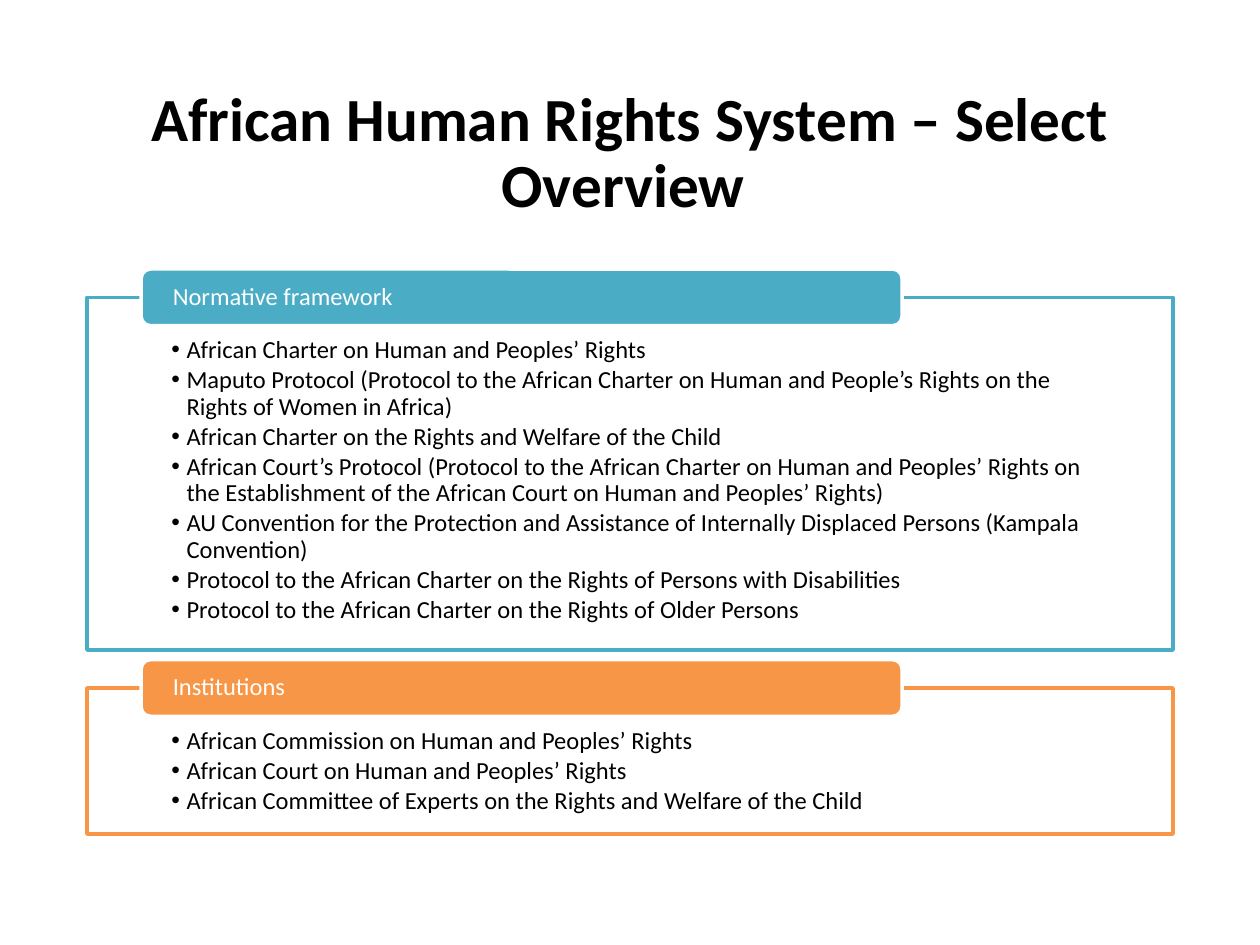
from pptx import Presentation
from pptx.dml.color import RGBColor
from pptx.enum.shapes import MSO_SHAPE as Shape
from pptx.enum.text import MSO_ANCHOR as Anchor, MSO_AUTO_SIZE as AutoSize, PP_ALIGN as Align
from pptx.util import Inches, Pt

TITLE = "African Human Rights System – Select Overview "
SECTIONS = [
    {"heading": "Normative framework", "accent": "teal", "top": 2.36, "height": 2.8,
     "items": [
         "African Charter on Human and Peoples’ Rights",
         "Maputo Protocol (Protocol to the African Charter on Human and People’s Rights "
         "on the Rights of Women in Africa)",
         "African Charter on the Rights and Welfare of the Child",
         "African Court’s Protocol (Protocol to the African Charter on Human and Peoples’ "
         "Rights on the Establishment of the African Court on Human and Peoples’ Rights)",
         "AU Convention for the Protection and Assistance of Internally Displaced Persons "
         "(Kampala Convention)",
         "Protocol to the African Charter on the Rights of Persons with Disabilities",
         "Protocol to the African Charter on the Rights of Older Persons",
     ]},
    {"heading": "Institutions", "accent": "orange", "top": 5.46, "height": 1.16,
     "items": [
         "African Commission on Human and Peoples’ Rights",
         "African Court on Human and Peoples’ Rights",
         "African Committee of Experts on the Rights and Welfare of the Child",
     ]},
]

THEME = {
    "font": "Calibri", "title_size": 35, "text_size": 14, "line_width": 2,
    "black": RGBColor.from_string("000000"), "white": RGBColor.from_string("FFFFFF"),
    "teal": RGBColor.from_string("4BACC6"), "orange": RGBColor.from_string("F79646"),
}
LEFT, WIDTH = 0.69, 8.62
TAB_LEFT, TAB_WIDTH, TAB_HEIGHT = 1.12, 6.04, 0.45
BULLET_INDENT = 0.12


def set_all(target, formats):
    for attribute, value in formats.items():
        setattr(target, attribute, value)


def place(part, left, top, width, height):
    set_all(part, {"left": Inches(left), "top": Inches(top),
                   "width": Inches(width), "height": Inches(height)})


def paint(part, fill, line):
    part.fill.solid()
    part.fill.fore_color.rgb = fill
    part.line.color.rgb = line
    part.line.width = Pt(THEME["line_width"])


def write(part, lines, color, size, anchor, align, margins, after=0, bold=False):
    """Fill a part with one paragraph per line; margins are left, top, right, bottom."""
    frame = part.text_frame
    frame.text = "\n".join(lines)
    sides = ("margin_left", "margin_top", "margin_right", "margin_bottom")
    set_all(frame, {"word_wrap": True, "auto_size": AutoSize.NONE, "vertical_anchor": anchor,
                    **{side: Inches(m) for side, m in zip(sides, margins)}})
    for paragraph in frame.paragraphs:
        set_all(paragraph, {"alignment": align, "line_spacing": 0.9,
                            "space_before": Pt(0), "space_after": Pt(after)})
        for run in paragraph.runs:
            set_all(run.font, {"name": THEME["font"], "size": Pt(size), "bold": bold})
            run.font.color.rgb = color


def add_section(slide, body, section):
    accent, top = THEME[section["accent"]], section["top"]
    place(body, LEFT, top, WIDTH, section["height"])
    paint(body, THEME["white"], accent)
    write(body, section["items"], THEME["black"], THEME["text_size"], Anchor.TOP,
          Align.LEFT, (0.67, 0.32, 0.67, 0.11), after=2)
    for paragraph in body.text_frame.paragraphs:
        properties = paragraph._p.get_or_add_pPr()
        properties.set("marL", str(Inches(BULLET_INDENT)))
        properties.set("indent", str(-Inches(BULLET_INDENT)))

    tab = slide.shapes.add_shape(
        Shape.ROUNDED_RECTANGLE, Inches(TAB_LEFT), Inches(top - TAB_HEIGHT / 2),
        Inches(TAB_WIDTH), Inches(TAB_HEIGHT))
    tab.shadow.inherit = False
    paint(tab, accent, THEME["white"])
    write(tab, [section["heading"]], THEME["white"], THEME["text_size"], Anchor.MIDDLE,
          Align.LEFT, (0.23, 0, 0.23, 0))


def main():
    deck = Presentation()
    set_all(deck, {"slide_width": Inches(10), "slide_height": Inches(7.5)})
    slide = deck.slides.add_slide(deck.slide_layouts.get_by_name("Two Content"))
    title, *bodies = list(slide.placeholders)[:1 + len(SECTIONS)]
    place(title, LEFT, 0.61, WIDTH, 1.24)
    write(title, [TITLE], THEME["black"], THEME["title_size"], Anchor.MIDDLE,
          Align.CENTER, (0.1, 0.05, 0.1, 0.05), bold=True)
    for body, section in zip(bodies, SECTIONS):
        add_section(slide, body, section)
    deck.save("out.pptx")


if __name__ == "__main__":
    main()
